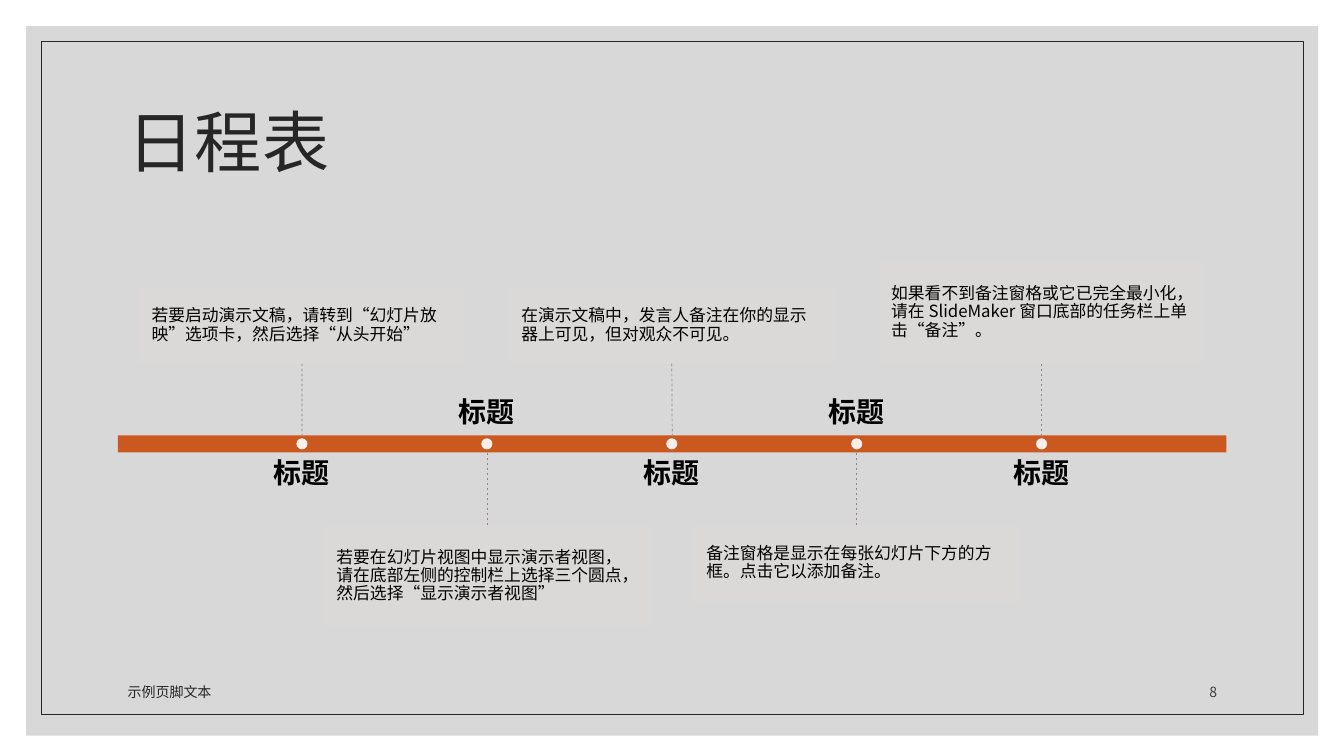
from lxml.etree import SubElement
from pptx import Presentation
from pptx.dml.color import RGBColor as Color
from pptx.enum.dml import MSO_LINE_DASH_STYLE as Dash
from pptx.enum.shapes import MSO_CONNECTOR as Connector, MSO_SHAPE as Preset
from pptx.enum.text import MSO_ANCHOR as Anchor, PP_ALIGN as Align
from pptx.oxml.ns import qn
from pptx.util import Cm, Pt

FONT = "Noto Sans CJK SC"
COLORS = {
    "backdrop": "BFBFBF", "ink": "262626", "number": "404040", "text": "000000",
    "bar": "CB581F", "card": "DCD9D9", "dash": "918485", "dot": "FFFFFF",
}


def draw(preset, place, fill=None, outline=None, width=1, opacity=100):
    shape = page.shapes.add_shape(preset, *map(Cm, place))
    shape.shadow.inherit = False
    if fill:
        shape.fill.solid()
        shape.fill.fore_color.rgb = Color.from_string(COLORS[fill])
    else:
        shape.fill.background()
    if outline:
        shape.line.color.rgb = Color.from_string(COLORS[outline])
        shape.line.width = Pt(width)
    else:
        shape.line.fill.background()
    if opacity < 100:
        for tint in shape._element.spPr.iter(qn("a:srgbClr")):
            SubElement(tint, qn("a:alpha"), val=str(opacity * 1000))
    return shape


def write(box, text, size, color, anchor, inset=None, bold=False, **layout):
    frame = box.text_frame
    frame.word_wrap = True
    frame.vertical_anchor = anchor
    if inset is not None:
        for side in ("left", "top", "right", "bottom"):
            setattr(frame, f"margin_{side}", Cm(inset))
    para = frame.paragraphs[0]
    for name, value in layout.items():
        setattr(para, name, value)
    span = para.add_run()
    span.text = text
    for name, value in {"name": FONT, "size": Pt(size), "bold": bold}.items():
        setattr(span.font, name, value)
    span.font.color.rgb = Color.from_string(COLORS[color])
    SubElement(span._r.get_or_add_rPr(), qn("a:ea"), typeface=FONT)


deck = Presentation()
deck.slide_width, deck.slide_height = Cm(33.87), Cm(19.05)
page = deck.slides.add_slide(deck.slide_layouts[6])

draw(Preset.RECTANGLE, (0.66, 0.66, 32.56, 17.88), "backdrop", opacity=60)
draw(Preset.RECTANGLE, (1.04, 1.04, 31.8, 16.97), outline="ink", width=0.5)

labels = [
    ("日程表", (2.97, 1.78, 27.94, 3.81), 48, "ink", Anchor.MIDDLE, Align.LEFT, 0.9),
    ("示例页脚文本", (2.97, 16.76, 16.15, 1.02), 10, "ink", Anchor.BOTTOM, Align.LEFT, 1.0),
    ("8", (28.58, 16.76, 2.34, 1.02), 10, "number", Anchor.BOTTOM, Align.RIGHT, 1.0),
]
for text, place, size, color, anchor, align, spacing in labels:
    box = page.shapes.add_textbox(*map(Cm, place))
    write(box, text, size, color, anchor, alignment=align, line_spacing=spacing)

BAR_TOP, BAR_HEIGHT = 10.97, 0.43
BAR_BOTTOM = BAR_TOP + BAR_HEIGHT
bar = draw(Preset.RECTANGLE, (2.97, BAR_TOP, 27.94, BAR_HEIGHT), "bar")

MIDDLE, STEP = 16.93, 4.66
CARD_WIDTH, UPPER_CARD_BOTTOM, LOWER_CARD_TOP = 8.18, 9.16, 13.24
HEADING_WIDTH, HEADING_HEIGHT = 7.44, 1.22
DOT = 0.28

events = [
    ("若要启动演示文稿，请转到“幻灯片放映”选项卡，然后选择“从头开始”", 1.91),
    ("若要在幻灯片视图中显示演示者视图，请在底部左侧的控制栏上选择三个圆点，然后选择“显示演示者视图”", 2.57),
    ("在演示文稿中，发言人备注在你的显示器上可见，但对观众不可见。", 1.91),
    ("备注窗格是显示在每张幻灯片下方的方框。点击它以添加备注。", 1.91),
    ("如果看不到备注窗格或它已完全最小化，请在 SlideMaker 窗口底部的任务栏上单击“备注”。", 2.57),
]
for index, (text, height) in enumerate(events):
    center = MIDDLE + (index - 2) * STEP
    if index % 2 == 0:
        card_top, card_side, card_edge, bar_edge = UPPER_CARD_BOTTOM - height, 2, UPPER_CARD_BOTTOM, BAR_TOP
        heading_top, heading_anchor = 11.58, Anchor.TOP
    else:
        card_top, card_side, card_edge, bar_edge = LOWER_CARD_TOP, 0, LOWER_CARD_TOP, BAR_BOTTOM
        heading_top, heading_anchor = 9.58, Anchor.BOTTOM

    heading = page.shapes.add_textbox(
        Cm(center - HEADING_WIDTH / 2), Cm(heading_top), Cm(HEADING_WIDTH), Cm(HEADING_HEIGHT))
    write(heading, "标题", 20, "text", heading_anchor, inset=0, bold=True,
          alignment=Align.CENTER, line_spacing=0.9, space_after=Pt(7))

    card = draw(Preset.RECTANGLE, (center - CARD_WIDTH / 2, card_top, CARD_WIDTH, height),
                "card", "card", opacity=90)
    write(card, text, 12, "text", Anchor.MIDDLE, inset=0.3,
          alignment=Align.LEFT, line_spacing=0.9, space_after=Pt(4.2))

    stem = page.shapes.add_connector(
        Connector.STRAIGHT, Cm(center), Cm(card_edge), Cm(center), Cm(bar_edge))
    stem.begin_connect(card, card_side)
    if center == MIDDLE:
        stem.end_connect(bar, 0)
    stem.line.color.rgb = Color.from_string(COLORS["dash"])
    stem.line.width = Pt(0.5)
    stem.line.dash_style = Dash.DASH
    SubElement(stem._element.spPr, qn("a:effectLst"))

    draw(Preset.OVAL, (center - DOT / 2, BAR_TOP + (BAR_HEIGHT - DOT) / 2, DOT, DOT),
         "dot", opacity=90)

deck.save("out.pptx")
